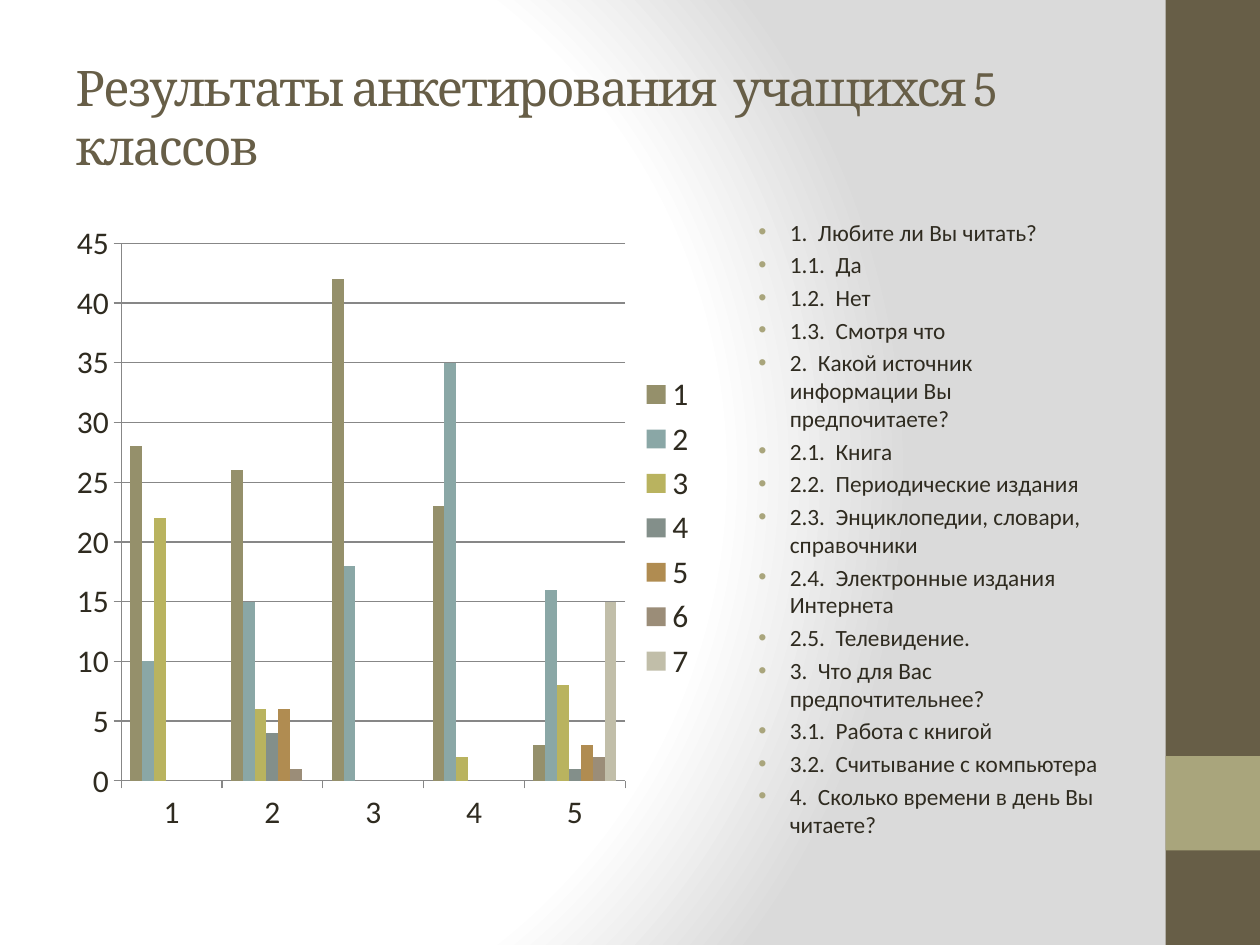
from dataclasses import dataclass

from lxml.etree import SubElement
from pptx import Presentation
from pptx.chart.data import CategoryChartData
from pptx.dml.color import RGBColor
from pptx.enum.chart import XL_CHART_TYPE, XL_LEGEND_POSITION, XL_TICK_MARK
from pptx.enum.shapes import MSO_SHAPE
from pptx.enum.text import MSO_ANCHOR, PP_ALIGN
from pptx.oxml import parse_xml
from pptx.oxml.ns import nsdecls, qn
from pptx.util import Inches, Pt

COLORS = {
    "olive": "675E47",
    "khaki": "A9A57C",
    "ink": "2F2B20",
    "grid": "878787",
    "white": "FFFFFF",
    "gray": "DADADA",
}


@dataclass
class Box:
    left: float
    top: float
    width: float
    height: float

    def lengths(self) -> tuple:
        return tuple(map(Inches, (self.left, self.top, self.width, self.height)))


@dataclass
class Panel:
    box: Box
    color: str


@dataclass
class Answer:
    name: str
    counts: tuple
    color: str


PANELS = [
    Panel(Box(9.25, 0, 0.75, 7.5), "olive"),
    Panel(Box(9.25, 6, 0.75, 0.75), "khaki"),
]
TITLE_BOX = Box(0.5, 0.3, 8.33, 1.25)
CHART_BOX = Box(0.5, 1.68, 5.13, 5.02)
QUESTIONS_BOX = Box(5.79, 1.68, 3.05, 5.02)

ANSWERS = [
    Answer("1", (28, 26, 42, 23, 3), "95906B"),
    Answer("2", (10, 15, 18, 35, 16), "8AA7A6"),
    Answer("3", (22, 6, None, 2, 8), "B9B35F"),
    Answer("4", (None, 4, None, None, 1), "838F8A"),
    Answer("5", (None, 6, None, None, 3), "B08C51"),
    Answer("6", (None, 1, None, None, 2), "9B8D78"),
    Answer("7", (None, None, None, None, 15), "C1BEA9"),
]

QUESTIONS = [
    "1.  Любите ли Вы читать?",
    "1.1.  Да",
    "1.2.  Нет",
    "1.3.  Смотря что",
    "2.  Какой источник информации Вы предпочитаете?",
    "2.1.  Книга",
    "2.2.  Периодические издания",
    "2.3.  Энциклопедии, словари, справочники",
    "2.4.  Электронные издания Интернета",
    "2.5.  Телевидение.",
    "3.  Что для Вас предпочтительнее?",
    "3.1.  Работа с книгой",
    "3.2.  Считывание с компьютера",
    "4.  Сколько времени в день Вы читаете?",
]


def rgb(color: str) -> RGBColor:
    return RGBColor.from_string(COLORS.get(color, color))


def set_background(slide) -> None:
    """Fill the slide with a circular gradient, white on the left."""
    slide.background.fill.solid()
    properties = slide.element.find(".//" + qn("p:bgPr"))
    stops = "".join(
        f'<a:gs pos="{percent * 1000}"><a:srgbClr val="{COLORS[color]}"/></a:gs>'
        for percent, color in ((0, "white"), (75, "white"), (100, "gray"))
    )
    gradient = parse_xml(
        f'<a:gradFill {nsdecls("a")} rotWithShape="1"><a:gsLst>{stops}</a:gsLst>'
        '<a:path path="circle"><a:fillToRect l="20000" t="50000" r="100000" b="50000"/>'
        "</a:path></a:gradFill>"
    )
    properties.replace(properties.find(qn("a:solidFill")), gradient)


def add_panel(slide, panel: Panel) -> None:
    rectangle = slide.shapes.add_shape(MSO_SHAPE.RECTANGLE, *panel.box.lengths())
    rectangle.shadow.inherit = False
    rectangle.fill.solid()
    rectangle.fill.fore_color.rgb = rgb(panel.color)
    rectangle.line.fill.background()


def write(frame, lines: list, *, font: str, size: float, color: str,
          anchor=MSO_ANCHOR.TOP, tracking: float = 0, before: float = 0,
          bullet: str = "") -> None:
    frame.word_wrap = True
    frame.vertical_anchor = anchor
    for index, line in enumerate(lines):
        paragraph = frame.paragraphs[0] if index == 0 else frame.add_paragraph()
        paragraph.alignment = PP_ALIGN.LEFT
        paragraph.space_before = Pt(before)
        run = paragraph.add_run()
        run.text = line
        run.font.name = font
        run.font.size = Pt(size)
        run.font.color.rgb = rgb(color)
        if tracking:
            run.font._element.set("spc", str(round(tracking * 100)))
        if bullet:
            add_bullet(paragraph, bullet)


def add_bullet(paragraph, color: str) -> None:
    properties = paragraph._p.get_or_add_pPr()
    properties.set("marL", str(Inches(0.38)))
    properties.set("indent", str(Inches(-0.25)))
    bullet_color = SubElement(properties, qn("a:buClr"))
    SubElement(bullet_color, qn("a:srgbClr"), val=COLORS[color])
    SubElement(properties, qn("a:buFont"), typeface="Arial")
    SubElement(properties, qn("a:buChar"), char="•")


def place_plot(chart, area: Box) -> None:
    """Fix the inner plot area, in fractions of the chart frame."""
    plot_area = chart._chartSpace.find(".//" + qn("c:plotArea"))
    for automatic in plot_area.findall(qn("c:layout")):
        plot_area.remove(automatic)
    parts = (("layoutTarget", "inner"), ("xMode", "edge"), ("yMode", "edge"),
             ("x", area.left), ("y", area.top), ("w", area.width), ("h", area.height))
    values = "".join(f'<c:{tag} val="{value}"/>' for tag, value in parts)
    plot_area.insert(0, parse_xml(
        f'<c:layout {nsdecls("c")}><c:manualLayout>{values}</c:manualLayout></c:layout>'))


def add_answers_chart(slide) -> None:
    data = CategoryChartData()
    data.categories = ["1", "2", "3", "4", "5"]
    for answer in ANSWERS:
        data.add_series(answer.name, answer.counts)
    chart = slide.shapes.add_chart(
        XL_CHART_TYPE.COLUMN_CLUSTERED, *CHART_BOX.lengths(), data).chart
    chart.has_title = False
    chart.font.name = "Calibri"
    chart.font.size = Pt(18)
    chart.font.color.rgb = rgb("ink")
    chart.has_legend = True
    chart.legend.position = XL_LEGEND_POSITION.RIGHT
    chart.legend.include_in_layout = False

    plot = chart.plots[0]
    plot.gap_width = 150
    plot.overlap = 0
    plot.vary_by_categories = False
    for series, answer in zip(plot.series, ANSWERS):
        series.format.fill.solid()
        series.format.fill.fore_color.rgb = rgb(answer.color)

    counts = chart.value_axis
    counts.minimum_scale, counts.maximum_scale, counts.major_unit = 0, 45, 5
    counts.has_major_gridlines = True
    for axis in (chart.category_axis, counts):
        axis.major_tick_mark = XL_TICK_MARK.OUTSIDE
    for line in (counts.major_gridlines.format.line, counts.format.line,
                 chart.category_axis.format.line):
        line.color.rgb = rgb("grid")
        line.width = Pt(0.75)
    place_plot(chart, Box(0.09, 0.05, 0.78, 0.85))


def main() -> None:
    deck = Presentation()
    deck.slide_width, deck.slide_height = Inches(10), Inches(7.5)
    slide = deck.slides.add_slide(deck.slide_layouts[5])
    set_background(slide)
    for panel in PANELS:
        add_panel(slide, panel)
    title = slide.shapes.title
    title.left, title.top, title.width, title.height = TITLE_BOX.lengths()
    write(title.text_frame, ["Результаты анкетирования  учащихся 5 классов"],
          font="Cambria", size=28, color="olive", anchor=MSO_ANCHOR.MIDDLE, tracking=-1)
    add_answers_chart(slide)
    questions = slide.shapes.add_textbox(*QUESTIONS_BOX.lengths())
    write(questions.text_frame, QUESTIONS, font="Calibri", size=13.3, color="ink",
          before=2.7, bullet="khaki")
    deck.save("out.pptx")


if __name__ == "__main__":
    main()
